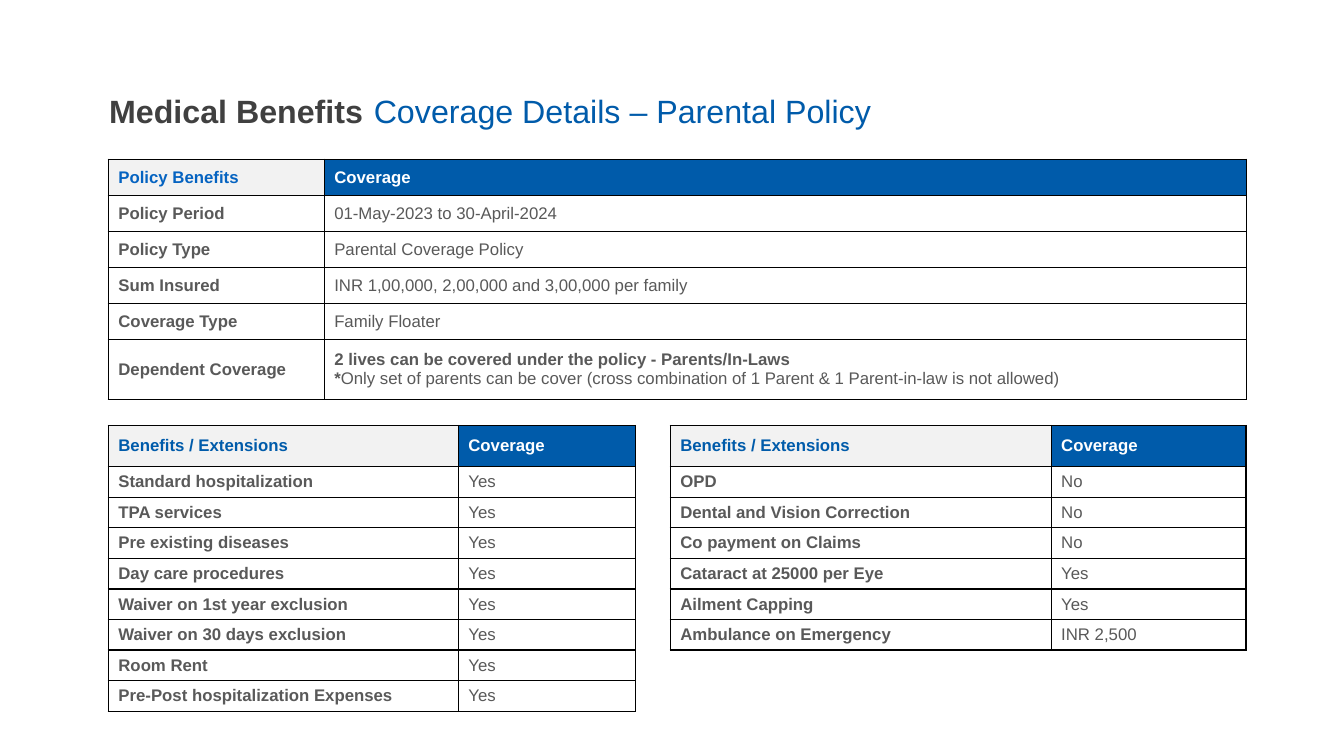
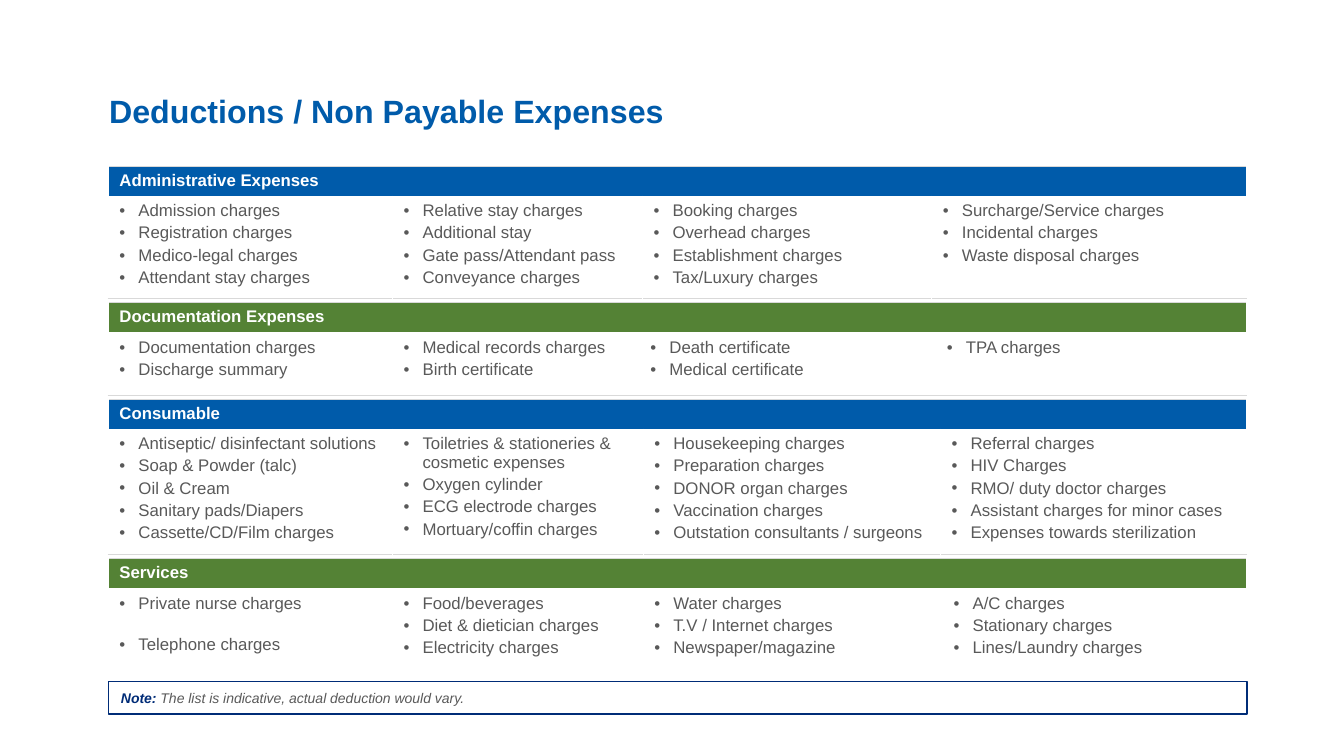
"""Build two slides on parental medical coverage and non payable expenses."""
from lxml import etree
from pptx import Presentation
from pptx import util as u
from pptx.dml.color import RGBColor
from pptx.enum import shapes, text
from pptx.oxml import ns

BLUE = RGBColor(0x00, 0x5B, 0xAA)
LINK_BLUE = RGBColor(0x05, 0x63, 0xC1)
NAVY = RGBColor(0x00, 0x2C, 0x77)
GREEN = RGBColor(0x54, 0x82, 0x35)
DARK = RGBColor(0x40, 0x40, 0x40)
GREY = RGBColor(0x59, 0x59, 0x59)
RULE = RGBColor(0xD9, 0xD9, 0xD9)
PALE = RGBColor(0xF2, 0xF2, 0xF2)
WHITE = RGBColor(0xFF, 0xFF, 0xFF)
BLACK = RGBColor(0x00, 0x00, 0x00)
LEFT = 2.73
TABLE_WIDTH = 28.68


def style_runs(paragraph, size, color, bold=False, italic=False):
    for run in paragraph.runs:
        run.font.name = "Arial"
        run.font.size = u.Pt(size)
        run.font.color.rgb = color
        run.font.bold = bold
        run.font.italic = italic


def write_cell(cell, content, color, bold, fill, edges, edge_color, edge_width):
    properties = cell._tc.get_or_add_tcPr()
    for edge in edges:
        line = etree.SubElement(properties, ns.qn(f"a:ln{edge}"), w=str(u.Pt(edge_width)))
        solid = etree.SubElement(line, ns.qn("a:solidFill"))
        etree.SubElement(solid, ns.qn("a:srgbClr"), val=str(edge_color))
    cell.fill.solid()
    cell.fill.fore_color.rgb = fill
    cell.text_frame.text = content
    for paragraph in cell.text_frame.paragraphs:
        style_runs(paragraph, 12, color, bold)


presentation = Presentation()
presentation.slide_width = u.Cm(33.87)
presentation.slide_height = u.Cm(19.05)
blank = presentation.slide_layouts[6]
coverage_slide = presentation.slides.add_slide(blank)
deductions_slide = presentation.slides.add_slide(blank)

titles = [
    (coverage_slide, "Medical Benefits", 2.75, 7.98, DARK, True),
    (coverage_slide, "Coverage Details – Parental Policy", 9.42, 13.51, BLUE, False),
    (deductions_slide, "Deductions / Non Payable Expenses", 2.75, 14.17, BLUE, True),
]
for slide, title, left, width, color, bold in titles:
    box = slide.shapes.add_textbox(u.Cm(left), u.Cm(2.08), u.Cm(width), u.Cm(1.09))
    frame = box.text_frame
    frame.margin_left = frame.margin_right = frame.margin_top = frame.margin_bottom = 0
    frame.word_wrap = True
    frame.text = title
    frame.paragraphs[0].line_spacing = u.Pt(34)
    style_runs(frame.paragraphs[0], 23, color, bold)

policy_rows = [
    ("Policy Benefits", "Coverage"),
    ("Policy Period", "01-May-2023 to 30-April-2024"),
    ("Policy Type", "Parental Coverage Policy"),
    ("Sum Insured", "INR 1,00,000, 2,00,000 and 3,00,000 per family"),
    ("Coverage Type", "Family Floater"),
    ("Dependent Coverage", "2 lives can be covered under the policy - Parents/In-Laws\n*"),
]
standard_rows = [("Benefits / Extensions", "Coverage")] + [
    (benefit, "Yes")
    for benefit in (
        "Standard hospitalization",
        "TPA services",
        "Pre existing diseases",
        "Day care procedures",
        "Waiver on 1st year exclusion",
        "Waiver on 30 days exclusion",
        "Room Rent",
        "Pre-Post hospitalization Expenses",
    )
]
extension_rows = [
    ("Benefits / Extensions", "Coverage"),
    ("OPD", "No"),
    ("Dental and Vision Correction", "No"),
    ("Co payment on Claims", "No"),
    ("Cataract at 25000 per Eye", "Yes"),
    ("Ailment Capping", "Yes"),
    ("Ambulance on Emergency", "INR 2,500"),
]
coverage_tables = [
    (standard_rows, LEFT, 10.72, (8.82, 4.46), [1.04] + [0.77] * 8, BLUE),
    (extension_rows, 16.89, 10.72, (9.6, 4.91), [1.04] + [0.77] * 6, BLUE),
    (policy_rows, LEFT, 4.01, (5.44, 23.24), [0.91] * 5 + [1.5], LINK_BLUE),
]
for rows, left, top, widths, heights, heading_color in coverage_tables:
    table = coverage_slide.shapes.add_table(
        len(rows), 2, u.Cm(left), u.Cm(top), u.Cm(sum(widths)), u.Cm(sum(heights))
    ).table
    table.first_row = table.horz_banding = False
    for column, width in zip(table.columns, widths):
        column.width = u.Cm(width)
    for row_index, (row, height) in enumerate(zip(rows, heights)):
        table.rows[row_index].height = u.Cm(height)
        for column_index, content in enumerate(row):
            header = row_index == 0
            color = (heading_color, WHITE)[column_index] if header else GREY
            fill = (PALE, BLUE)[column_index] if header else WHITE
            cell = table.cell(row_index, column_index)
            cell.vertical_anchor = text.MSO_ANCHOR.MIDDLE
            write_cell(cell, content, color, header or column_index == 0, fill, "LRTB", BLACK, 1)

lives, restriction = table.cell(5, 1).text_frame.paragraphs
restriction.add_run().text = (
    "Only set of parents can be cover "
    "(cross combination of 1 Parent & 1 Parent-in-law is not allowed)"
)
style_runs(lives, 12, GREY, True)
style_runs(restriction, 12, GREY)
restriction.runs[0].font.bold = True

sections = [
    ("Administrative Expenses", BLUE, 2.57, (7.16, 6.3, 7.29), 2.4, [
        ["Admission charges", "Registration charges", "Medico-legal charges",
         "Attendant stay charges"],
        ["Relative stay charges", "Additional stay", "Gate pass/Attendant pass",
         "Conveyance charges"],
        ["Booking charges", "Overhead charges", "Establishment charges",
         "Tax/Luxury charges"],
        ["Surcharge/Service charges", "Incidental charges", "Waste disposal charges"],
    ]),
    ("Documentation Expenses", GREEN, 1.56, (7.16, 6.22, 7.47), 2.4, [
        ["Documentation charges", "Discharge summary"],
        ["Medical records charges", "Birth certificate"],
        ["Death certificate", "Medical certificate"],
        ["TPA charges"],
    ]),
    ("Consumable", BLUE, 3.15, (7.16, 6.32, 7.49), 2.4, [
        ["Antiseptic/ disinfectant solutions", "Soap & Powder (talc)", "Oil & Cream",
         "Sanitary pads/Diapers", "Cassette/CD/Film charges"],
        ["Toiletries & stationeries & cosmetic expenses", "Oxygen cylinder",
         "ECG electrode charges", "Mortuary/coffin charges"],
        ["Housekeeping charges", "Preparation charges", "DONOR organ charges",
         "Vaccination charges", "Outstation consultants / surgeons"],
        ["Referral charges", "HIV Charges", "RMO/ duty doctor charges",
         "Assistant charges for minor cases", "Expenses towards sterilization"],
    ]),
    ("Services", GREEN, 2.32, (7.16, 6.32, 7.54), 16, [
        ["Private nurse charges", "Telephone charges"],
        ["Food/beverages", "Diet & dietician charges", "Electricity charges"],
        ["Water charges", "T.V / Internet charges", "Newspaper/magazine"],
        ["A/C charges", "Stationary charges", "Lines/Laundry charges"],
    ]),
]
HEADER_HEIGHT = 0.77
SECTION_GAP = 0.1
top = 4.18
for heading, band_color, body_height, widths, first_column_gap, lists in sections:
    height = HEADER_HEIGHT + body_height
    table = deductions_slide.shapes.add_table(
        2, 4, u.Cm(LEFT), u.Cm(top), u.Cm(TABLE_WIDTH), u.Cm(height)
    ).table
    table.first_row = table.horz_banding = False
    table.rows[0].height = u.Cm(HEADER_HEIGHT)
    table.rows[1].height = u.Cm(body_height)
    for column, width in zip(table.columns, (*widths, TABLE_WIDTH - sum(widths))):
        column.width = u.Cm(width)
    for column_index, items in enumerate(lists):
        band = table.cell(0, column_index)
        write_cell(band, heading if column_index == 0 else "", WHITE, True, band_color, "T", RULE, 0.25)
        body = table.cell(1, column_index)
        write_cell(body, "\n".join(items), GREY, False, WHITE, "B", RULE, 0.25)
        for cell in (band, body):
            cell.margin_left = cell.margin_right = u.Cm(0.28)
        gap = first_column_gap if column_index == 0 else 2.4
        for item_index, paragraph in enumerate(body.text_frame.paragraphs):
            properties = paragraph._p.get_or_add_pPr()
            properties.set("marL", str(u.Cm(0.48)))
            properties.set("indent", str(-u.Cm(0.48)))
            etree.SubElement(properties, ns.qn("a:buFont"), typeface="Arial")
            etree.SubElement(properties, ns.qn("a:buChar"), char="•")
            if item_index:
                paragraph.space_before = u.Pt(gap)
    table.cell(0, 0).merge(table.cell(0, 3))
    top += height + SECTION_GAP

note = deductions_slide.shapes.add_shape(
    shapes.MSO_SHAPE.RECTANGLE, u.Cm(LEFT), u.Cm(17.17), u.Cm(28.7), u.Cm(0.82)
)
note.shadow.inherit = False
note.fill.solid()
note.fill.fore_color.rgb = WHITE
note.line.color.rgb = NAVY
note.line.width = u.Pt(1)
frame = note.text_frame
frame.word_wrap = True
frame.vertical_anchor = text.MSO_ANCHOR.MIDDLE
frame.margin_left = u.Cm(0.32)
frame.margin_top = frame.margin_bottom = 0
frame.text = "Note: "
paragraph = frame.paragraphs[0]
paragraph.alignment = text.PP_ALIGN.LEFT
paragraph.add_run().text = "The list is indicative, actual deduction would vary."
style_runs(paragraph, 10, GREY, italic=True)
paragraph.runs[0].font.bold = True
paragraph.runs[0].font.color.rgb = NAVY

presentation.save("out.pptx")
